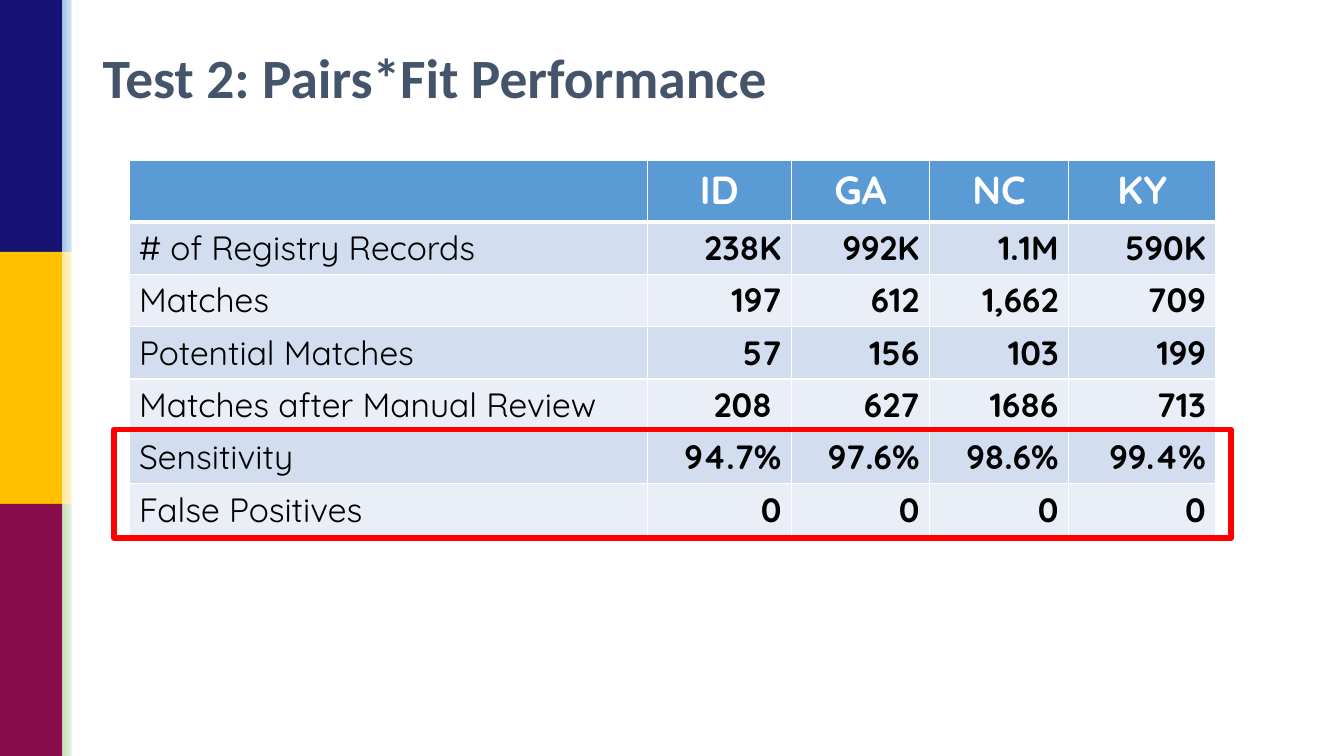
from pptx import Presentation, util as u
from pptx.dml import color
from pptx.enum import shapes, text
from pptx.oxml import ns
from lxml import etree

PX = 9144  # 100 px to the inch
HEADER, BODY = 0, 1


def rgb(value):
    return color.RGBColor.from_string(value)


def write(frame, content, font="Quicksand", size=24, ink="000000", bold=False,
          align=text.PP_ALIGN.LEFT):
    paragraph = frame.paragraphs[0]
    paragraph.alignment = align
    run = paragraph.add_run()
    run.text = content
    run.font.name, run.font.size, run.font.bold = font, u.Pt(size), bold
    run.font.color.rgb = rgb(ink)


def set_borders(cell, ink="FFFFFF", **widths):
    """Draw the cell's sides; widths are points, keyed L, R, T and B in that order."""
    properties = cell._tc.get_or_add_tcPr()
    for side, points in widths.items():
        line = etree.SubElement(properties, ns.qn(f"a:ln{side}"), w=str(u.Pt(points)))
        fill = etree.SubElement(line, ns.qn("a:solidFill"))
        etree.SubElement(fill, ns.qn("a:srgbClr"), val=ink)


class PerformanceSlide:
    header_fill = "5B9BD5"
    band_fills = ("D2DEEF", "EAEFF7")

    def __init__(self, presentation):
        self.slide = presentation.slides.add_slide(presentation.slide_layouts[6])

    def rectangle(self, *box, fill=None, fade=None, line=None, weight=1):
        """Add a rectangle; fade is the start colour of a left-to-right fade to white."""
        rect = self.slide.shapes.add_shape(
            shapes.MSO_SHAPE.RECTANGLE, *(n * PX for n in box))
        rect.shadow.inherit = False
        if fade:
            rect.fill.gradient()
            rect.fill.gradient_angle = 0
            for stop, position, ink in zip(rect.fill.gradient_stops, (0, 1), (fade, "FFFFFF")):
                stop.position = position
                stop.color.rgb = rgb(ink)
        elif fill:
            rect.fill.solid()
            rect.fill.fore_color.rgb = rgb(fill)
        else:
            rect.fill.background()
        if line:
            rect.line.color.rgb = rgb(line)
            rect.line.width = u.Pt(weight)
        else:
            rect.line.fill.background()

    def title(self, content, *box):
        frame = self.slide.shapes.add_textbox(*(n * PX for n in box)).text_frame
        frame.word_wrap = True
        frame.vertical_anchor = text.MSO_ANCHOR.MIDDLE
        write(frame, content, font="Calibri", size=39.6, ink="44546A", bold=True)

    def table(self, left, top, widths, heights, rows):
        grid = self.slide.shapes.add_table(
            len(rows), len(widths), left * PX, top * PX,
            sum(widths) * PX, sum(heights) * PX).table
        grid.horz_banding = False
        for column, width in zip(grid.columns, widths):
            column.width = width * PX
        for r, (height, values) in enumerate(zip(heights, rows)):
            grid.rows[r].height = height * PX
            for c, value in enumerate(values):
                self.fill_cell(grid.cell(r, c), value, r, c)

    def fill_cell(self, cell, value, r, c):
        header = r == HEADER
        set_borders(cell, L=1, R=1, T=3 if r == BODY else 1, B=3 if header else 1)
        cell.fill.solid()
        cell.fill.fore_color.rgb = rgb(
            self.header_fill if header else self.band_fills[(r - BODY) % 2])
        if header:
            write(cell.text_frame, value, size=28, ink="FFFFFF", bold=True,
                  align=text.PP_ALIGN.CENTER)
        elif c == 0:
            write(cell.text_frame, value)
        else:
            write(cell.text_frame, value, bold=True, align=text.PP_ALIGN.RIGHT)


def main():
    presentation = Presentation()
    presentation.slide_width, presentation.slide_height = 1333 * PX, 750 * PX
    page = PerformanceSlide(presentation)

    side_bands = [("181274", "9DC3E6"), ("FFC000", "FFE699"), ("890C4C", "C5E0B4")]
    for i, (solid, fade) in enumerate(side_bands):
        page.rectangle(0, i * 250, 62, 250, fill=solid)
        page.rectangle(62, i * 250, 16, 250, fade=fade)
    page.rectangle(71, 0, 5, 750, fill="FFFFFF")

    results = [
        ("", "ID", "GA", "NC", "KY"),
        ("# of Registry Records", "238K", "992K", "1.1M", "590K"),
        ("Matches", "197", "612", "1,662", "709"),
        ("Potential Matches", "57", "156", "103", "199"),
        ("Matches after Manual Review", "208 ", "627", "1686", "713"),
        ("Sensitivity", "94.7%", "97.6%", "98.6%", "99.4%"),
        ("False Positives", "0", "0", "0", "0"),
    ]
    page.table(128, 159, [514, 143, 137, 138, 146], [61] + [52] * 6, results)
    page.title("Test 2: Pairs*Fit Performance", 92, 33, 1150, 85)
    page.rectangle(113, 426, 1108, 108, line="FF0000", weight=4)
    presentation.save("out.pptx")


if __name__ == "__main__":
    main()
